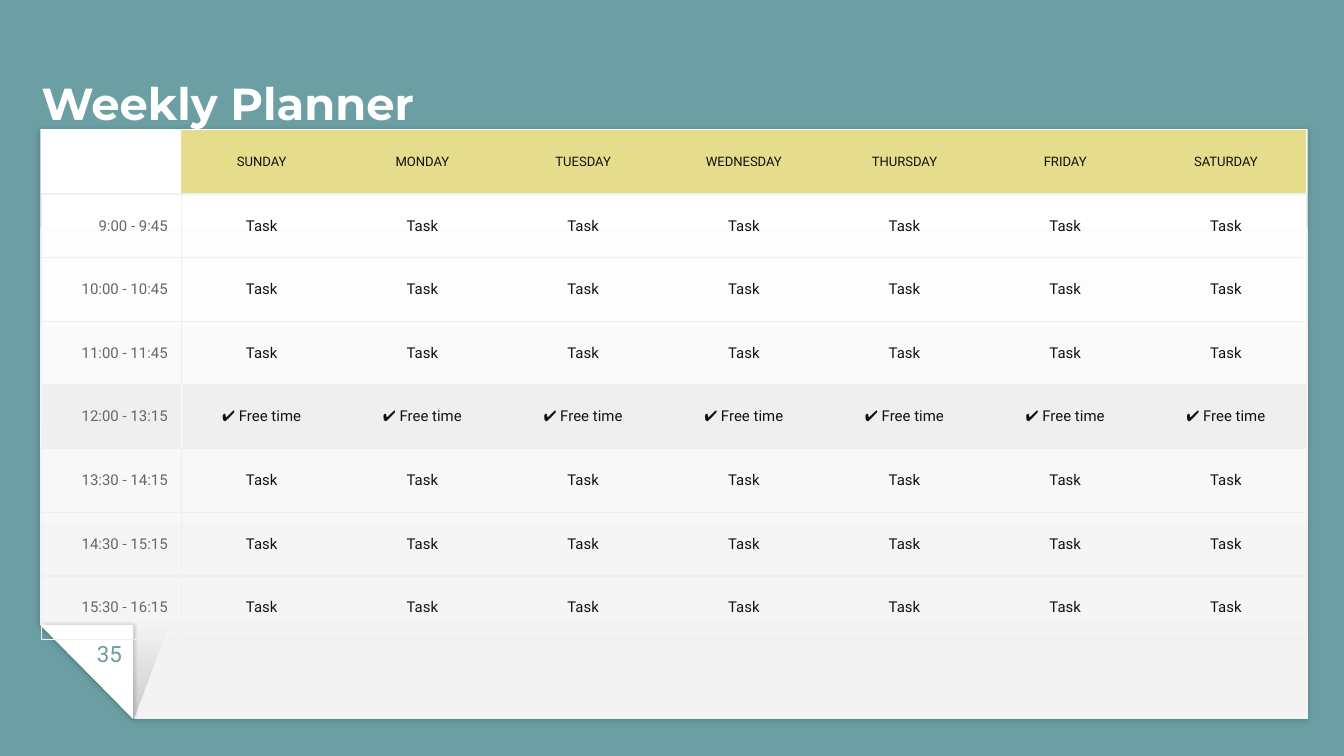
from dataclasses import dataclass

from lxml import etree
from pptx import Presentation
from pptx import util as u
from pptx.dml.color import RGBColor
from pptx.enum import shapes, text
from pptx.oxml import ns


@dataclass(frozen=True)
class Theme:
    """Colours, fonts and type sizes of the planner."""
    teal: str = "6B9FA4"
    yellow: str = "E6DD8C"
    white: str = "FFFFFF"
    page_end: str = "F3F3F3"
    black: str = "000000"
    rule: str = "EFEFEF"
    ink: str = "111111"
    grey: str = "666666"
    heading: str = "Montserrat"
    body: str = "Roboto"
    title_size: float = 24
    number_size: float = 12
    day_size: float = 7
    task_size: float = 8


THEME = Theme()
ALIGN = text.PP_ALIGN
ANCHOR = text.MSO_ANCHOR
SHAPE = shapes.MSO_SHAPE
DAYS = ["SUNDAY", "MONDAY", "TUESDAY", "WEDNESDAY", "THURSDAY", "FRIDAY", "SATURDAY"]
BREAK = "12:00 - 13:15"
TIMES = ["9:00 - 9:45", "10:00 - 10:45", "11:00 - 11:45", BREAK,
         "13:30 - 14:15", "14:30 - 15:15", "15:30 - 16:15"]


def rgb(color):
    """Turn a hex string into a colour."""
    return RGBColor.from_string(color)


def sub(parent, tag, **attrs):
    """Append a DrawingML child element."""
    return etree.SubElement(parent, ns.qn(tag), {k: str(v) for k, v in attrs.items()})


def write(tf, value, *, size, color, font=THEME.body, bold=False, align=ALIGN.LEFT):
    """Write one formatted paragraph into a text frame."""
    p = tf.paragraphs[0]
    p.alignment = align
    if not value:
        sub(p._p, "a:endParaRPr", sz=size * 100)
        return
    r = p.add_run()
    r.text = value
    r.font.size, r.font.name, r.font.bold = u.Pt(size), font, bold
    r.font.color.rgb = rgb(color)


def add_text(slide, box, value, *, inset=0, anchor=ANCHOR.TOP, **style):
    """Add a wrapped text box."""
    tf = slide.shapes.add_textbox(*map(u.Inches, box)).text_frame
    tf.word_wrap, tf.vertical_anchor = True, anchor
    tf.margin_left = tf.margin_right = tf.margin_top = tf.margin_bottom = u.Inches(inset)
    write(tf, value, **style)


def add_paper(slide, kind, box):
    """Add an outline-free shape turned upside down."""
    s = slide.shapes.add_shape(kind, *map(u.Inches, box))
    s.rotation = 180
    s.line.fill.background()
    s.shadow.inherit = False
    return s


def set_gradient(s, colors, angle, alphas=()):
    """Fill a shape with a two-stop gradient."""
    s.fill.gradient()
    s.fill.gradient_angle = angle
    for stop, color in zip(s.fill.gradient_stops, colors):
        stop.color.rgb = rgb(color)
    for node, alpha in zip(s._element.spPr.iter(ns.qn("a:srgbClr")), alphas):
        sub(node, "a:alpha", val=alpha * 1000)


def set_shadow(s, blur, distance, angle):
    """Give a shape a soft outer shadow."""
    effects = s._element.spPr.find(ns.qn("a:effectLst"))
    shadow = sub(effects, "a:outerShdw", blurRad=u.Pt(blur), dist=u.Pt(distance),
                 dir=angle * 60000, algn="bl", rotWithShape=0)
    sub(sub(shadow, "a:srgbClr", val=THEME.black), "a:alpha", val=20000)


def set_borders(cell, **colors):
    """Draw the named cell edges and clear the others."""
    tc_pr = cell._tc.get_or_add_tcPr()
    for side in "LRTB":
        ln = sub(tc_pr, f"a:ln{side}", w=u.Pt(0.75))
        if side in colors:
            sub(sub(ln, "a:solidFill"), "a:srgbClr", val=colors[side])
        else:
            sub(ln, "a:noFill")


def fill_cell(cell, value, borders, fill=None, **style):
    """Format a table cell and write its text."""
    set_borders(cell, **borders)
    if fill:
        cell.fill.solid()
        cell.fill.fore_color.rgb = rgb(fill)
    else:
        cell.fill.background()
    cell.vertical_anchor = ANCHOR.MIDDLE
    cell.margin_left = cell.margin_right = cell.margin_top = cell.margin_bottom = u.Inches(0.1)
    write(cell.text_frame, value, **style)


def add_page(slide):
    """Add the sheet of paper with its folded corner."""
    sheet = add_paper(slide, SHAPE.SNIP_1_RECTANGLE, (0.3, 0.96, 9.43, 4.39))
    sheet.adjustments[0] = 0.16
    set_gradient(sheet, (THEME.white, THEME.page_end), 90)
    set_shadow(sheet, 3.4, 0.8, 90)

    fold = add_paper(slide, SHAPE.RIGHT_TRIANGLE, (0.3, 4.65, 0.69, 0.7))
    fold.fill.solid()
    fold.fill.fore_color.rgb = rgb(THEME.white)
    set_shadow(fold, 2.2, 0.8, 0)

    shade = add_paper(slide, SHAPE.RIGHT_TRIANGLE, (0.99, 4.65, 0.26, 0.7))
    shade._element.spPr.xfrm.set("flipH", "1")
    set_gradient(shade, (THEME.black, THEME.black), 270, (17, 0))


def add_planner(slide):
    """Add the table of days and time slots."""
    rows, cols = len(TIMES) + 1, len(DAYS) + 1
    width, height, time_width = u.Inches(9.41), u.Inches(3.79), u.Inches(1.04)
    table = slide.shapes.add_table(rows, cols, u.Inches(0.31), u.Inches(0.97), width, height).table
    table.first_row = table.horz_banding = False
    for i, column in enumerate(table.columns):
        column.width = (width - time_width) // len(DAYS) if i else time_width
    for row in table.rows:
        row.height = height // rows

    rule = THEME.rule
    for j, day in enumerate([""] + DAYS):
        fill_cell(table.cell(0, j), day, {"B": rule}, THEME.yellow if day else None,
                  size=THEME.day_size, color=THEME.ink, align=ALIGN.CENTER)
    for i, time in enumerate(TIMES, 1):
        free = time == BREAK
        fill, divider = (rule, THEME.white) if free else (None, rule)
        edges = {"T": rule, "B": rule}
        fill_cell(table.cell(i, 0), time, {**edges, "L": rule, "R": divider}, fill,
                  size=THEME.task_size, color=THEME.grey, align=ALIGN.RIGHT)
        for j in range(1, cols):
            sides = {1: {"L": divider}, cols - 1: {"R": rule}}.get(j, {})
            fill_cell(table.cell(i, j), "✔ Free time" if free else "Task", {**edges, **sides},
                      fill, size=THEME.task_size, color=THEME.ink, align=ALIGN.CENTER)


def main():
    """Build and save the weekly planner slide."""
    prs = Presentation()
    prs.slide_width = u.Inches(10)
    prs.slide_height = prs.slide_width * 9 // 16
    slide = prs.slides.add_slide(prs.slide_layouts[6])
    slide.background.fill.solid()
    slide.background.fill.fore_color.rgb = rgb(THEME.teal)
    add_page(slide)
    add_text(slide, (0.31, 0.39, 9.19, 0.57), "Weekly Planner", anchor=ANCHOR.BOTTOM,
             size=THEME.title_size, color=THEME.white, font=THEME.heading, bold=True)
    add_text(slide, (0.56, 4.66, 0.51, 0.34), "35", inset=0.1,
             size=THEME.number_size, color=THEME.teal, align=ALIGN.CENTER)
    add_planner(slide)
    prs.save("out.pptx")


if __name__ == "__main__":
    main()
